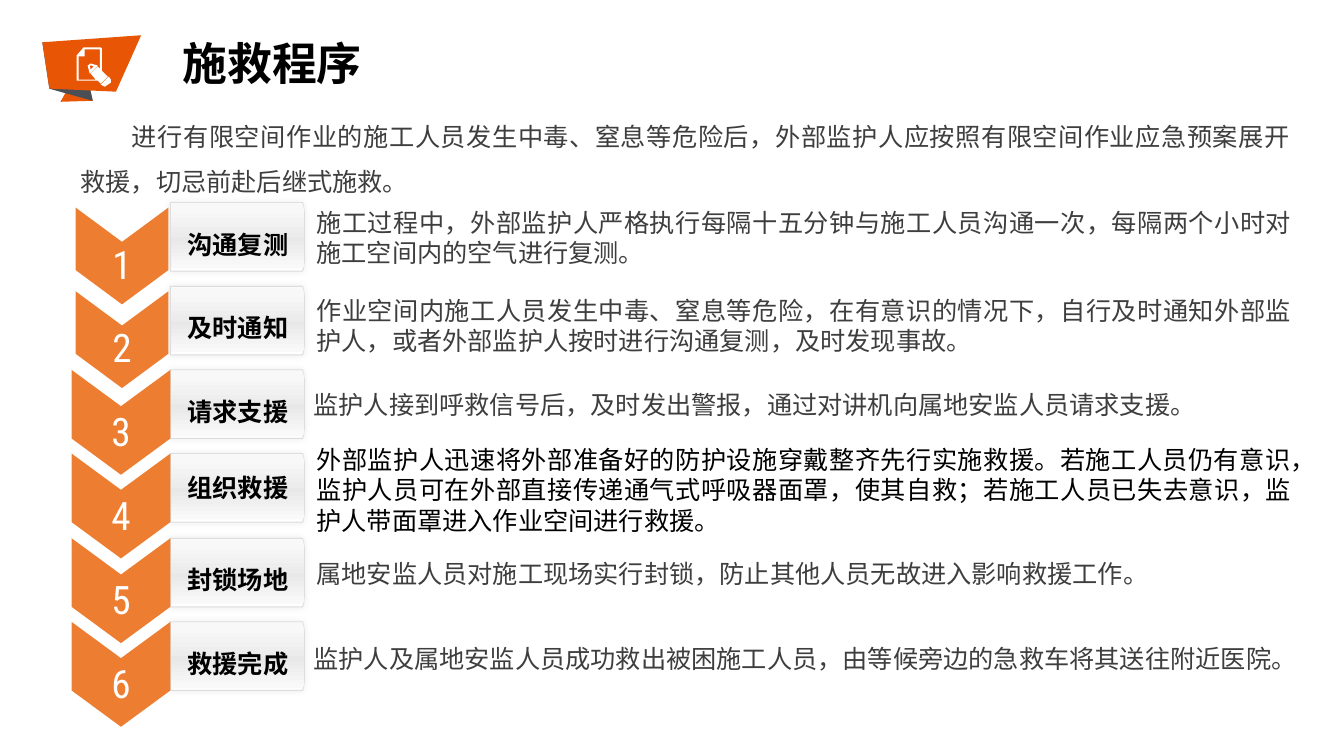
from lxml.etree import SubElement
from pptx import Presentation
from pptx.dml.color import RGBColor
from pptx.enum.lang import MSO_LANGUAGE_ID as Language
from pptx.enum.text import MSO_ANCHOR as Anchor, MSO_AUTO_SIZE as AutoSize, PP_ALIGN as Align
from pptx.oxml.ns import qn
from pptx.util import Pt

PX = 9144  # EMU per px, 100 px to the inch
CJK, LATIN, DIGITS = "Noto Sans CJK SC", "Calibri", "Roboto Condensed"
COLORS = {
    "chevron": "ED7D31", "banner": "E85504", "fold": "494F54", "white": "FFFFFF",
    "body": "3E3E3E", "black": "000000", "plate_line": "DDDDDD",
}
RIM_STOPS = [(0, "FFFFFF"), (52, "F0F0F0"), (100, "FFFFFF")]
FACE_STOPS = [(8, "F8F8F8"), (50, "ECECEC"), (52, "E8E8E8"), (98, "F9F9F9"), (100, "FFFFFF")]

BODY = {"size": Pt(18), "name": LATIN, "color": "body"}
EMPHASIS = {"size": Pt(18), "name": CJK, "color": "black"}
LABEL = {**EMPHASIS, "bold": True}
NUMBER = {"size": Pt(28), "name": DIGITS, "color": "white"}
TITLE = {**LABEL, "size": Pt(32)}

JUSTIFIED = {"alignment": Align.JUSTIFY}
TIGHT = {"line_spacing": Pt(16.1)}
CENTERED = {"alignment": Align.CENTER}
LOOSE = {**CENTERED, "line_spacing": 1.5}

INTRO = "进行有限空间作业的施工人员发生中毒、窒息等危险后，外部监护人应按照有限空间作业应急预案展开救援，切忌前赴后继式施救。"
# label, label layout, text, text box (left, top, width, height), text layout, text font
STEPS = [
    ("沟通复测", LOOSE, "施工过程中，外部监护人严格执行每隔十五分钟与施工人员沟通一次，每隔两个小时对施工空间内的空气进行复测。",
     (304, 201, 987, 71), JUSTIFIED, BODY),
    ("及时通知", LOOSE, "作业空间内施工人员发生中毒、窒息等危险，在有意识的情况下，自行及时通知外部监护人，或者外部监护人按时进行沟通复测，及时发现事故。",
     (304, 288, 987, 71), JUSTIFIED, BODY),
    ("请求支援", LOOSE, "监护人接到呼救信号后，及时发出警报，通过对讲机向属地安监人员请求支援。",
     (301, 389, 915, 33), {**JUSTIFIED, **TIGHT}, BODY),
    ("组织救援", CENTERED, "外部监护人迅速将外部准备好的防护设施穿戴整齐先行实施救援。若施工人员仍有意识，监护人员可在外部直接传递通气式呼吸器面罩，使其自救；若施工人员已失去意识，监护人带面罩进入作业空间进行救援。",
     (304, 436, 987, 101), JUSTIFIED, EMPHASIS),
    ("封锁场地", LOOSE, "属地安监人员对施工现场实行封锁，防止其他人员无故进入影响救援工作。",
     (304, 557, 987, 33), TIGHT, BODY),
    ("救援完成", LOOSE, "监护人及属地安监人员成功救出被困施工人员，由等候旁边的急救车将其送往附近医院。",
     (301, 641, 989, 34), TIGHT, BODY),
]

BANNER = [
    ("banner", [(92, 100), (83, 60), (60, 101)]),
    ("fold", [(83, 60), (42, 42), (49, 88), (92, 100)]),
    ("banner", [(140, 35), (42, 42), (49, 88), (115, 91)]),
]
PAGE_AND_PEN = [
    [(76, 80), (76, 55), (83, 47), (100, 47), (101, 48), (101, 70), (107, 76), (100, 83), (97, 80)],
    [(99, 49), (84, 49), (84, 56), (78, 56), (78, 79), (95, 79), (90, 73), (97, 66), (99, 68)],
    [(110, 82), (104, 86), (100, 84), (108, 76), (110, 79)],
    [(89, 73), (87, 65), (90, 63), (97, 65), (93, 69)],
    [(91, 65), (89, 65), (90, 69), (93, 66)],
]


def set_all(target, values):
    for name, value in values.items():
        setattr(target, name, value)


def write(shape, text, layout, style, frame_values):
    frame = shape.text_frame
    set_all(frame, frame_values)
    paragraph = frame.paragraphs[0]
    set_all(paragraph, layout)
    run = paragraph.add_run()
    run.text = text
    font = run.font
    set_all(font, {name: value for name, value in style.items() if name != "color"})
    font.color.rgb = RGBColor.from_string(COLORS[style["color"]])
    font.language_id = Language.SIMPLIFIED_CHINESE
    SubElement(run._r.get_or_add_rPr(), qn("a:ea"), typeface=CJK)
    return paragraph


def add_text(slide, text, box, layout, style, wrap=True):
    shape = slide.shapes.add_textbox(*(length * PX for length in box))
    return write(shape, text, layout, style, {"word_wrap": wrap, "auto_size": AutoSize.SHAPE_TO_FIT_TEXT})


def add_outline(slide, contours, color=None):
    """Add one borderless freeform; inner contours become holes."""
    builder = slide.shapes.build_freeform(*contours[0][0], scale=PX)
    for index, contour in enumerate(contours):
        if index:
            builder.move_to(*contour[0])
        builder.add_line_segments(contour[1:], close=True)
    shape = builder.convert_to_shape()
    shape.shadow.inherit = False
    shape.line.fill.background()
    if color:
        shape.fill.solid()
        shape.fill.fore_color.rgb = RGBColor.from_string(COLORS[color])
    return shape


def fill_gradient(shape, stops):
    """Fill from top to bottom with (percent, hex) stops."""
    shape.fill.gradient()
    shape.fill.gradient_angle = 270
    stop_list = shape._element.spPr.find(qn("a:gradFill")).find(qn("a:gsLst"))
    stop_list.clear()
    for percent, color in stops:
        stop = SubElement(stop_list, qn("a:gs"), pos=str(percent * 1000))
        SubElement(stop, qn("a:srgbClr"), val=color)


def add_soft_shadow(shape):
    effects = shape._element.spPr.find(qn("a:effectLst"))
    shadow = SubElement(effects, qn("a:outerShdw"), blurRad=str(Pt(5)), dist="0", dir="0",
                        algn="ctr", rotWithShape="0")
    color = SubElement(shadow, qn("a:srgbClr"), val=COLORS["black"])
    SubElement(color, qn("a:alpha"), val="8000")


def add_plate_layer(slide, left, top, width, height, stops):
    """Add a gradient plate with softened right corners."""
    right, bottom = left + width, top + height
    upper = [(right - 2, top), (right - 1, top + 3), (right, top + 11)]
    lower = [(x, top + bottom - y) for x, y in reversed(upper)]
    shape = add_outline(slide, [[(left, top), *upper, *lower, (left, bottom)]])
    fill_gradient(shape, stops)
    return shape


def add_plate(slide, top, label, layout):
    rim = add_plate_layer(slide, 169, top, 133, 68, RIM_STOPS)
    rim.line.color.rgb = RGBColor.from_string(COLORS["plate_line"])
    rim.line.width = Pt(0.75)
    add_soft_shadow(rim)
    face = add_plate_layer(slide, 170, top + 1, 132, 65, FACE_STOPS)
    write(face, label, layout, LABEL, {"word_wrap": False, "vertical_anchor": Anchor.MIDDLE})


def add_chevron(slide, left, top, width, height):
    notch = round(height * 0.35)
    right, middle, bottom = left + width, left + width // 2, top + height
    return add_outline(slide, [[(right, top), (right, bottom - notch), (middle, bottom),
                                (left, bottom - notch), (left, top), (middle, top + notch)]], "chevron")


def add_step_marker(slide, number, top):
    backed = number > 2
    if backed:
        add_chevron(slide, 71, top, 98, 104)
    chevron = add_chevron(slide, 74 if backed else 75, top + 5, 92, 96)
    write(chevron, str(number), CENTERED, NUMBER,
          {"word_wrap": True, "vertical_anchor": Anchor.MIDDLE, "margin_top": 20 * PX})


def main():
    presentation = Presentation()
    set_all(presentation, {"slide_width": 1333 * PX, "slide_height": 750 * PX})
    slide = presentation.slides.add_slide(presentation.slide_layouts[6])

    for index, (label, label_layout, *_) in enumerate(STEPS):
        top = 201 + index * 333 // 4
        add_plate(slide, top, label, label_layout)
        add_step_marker(slide, index + 1, top)

    intro = add_text(slide, INTRO, (70, 100, 1220, 101),
                     {**JUSTIFIED, "line_spacing": 1.5, "space_before": Pt(9.4), "space_after": Pt(6.2)}, BODY)
    intro._p.get_or_add_pPr().set("indent", str(51 * PX))
    for _, _, text, box, layout, style in STEPS:
        add_text(slide, text, box, layout, style)

    for color, points in BANNER:
        add_outline(slide, [points], color)
    add_outline(slide, PAGE_AND_PEN, "white")
    add_text(slide, "施救程序", (170, 51, 200, 46), {**CENTERED, "line_spacing": Pt(24)}, TITLE, wrap=False)
    presentation.save("out.pptx")


if __name__ == "__main__":
    main()
